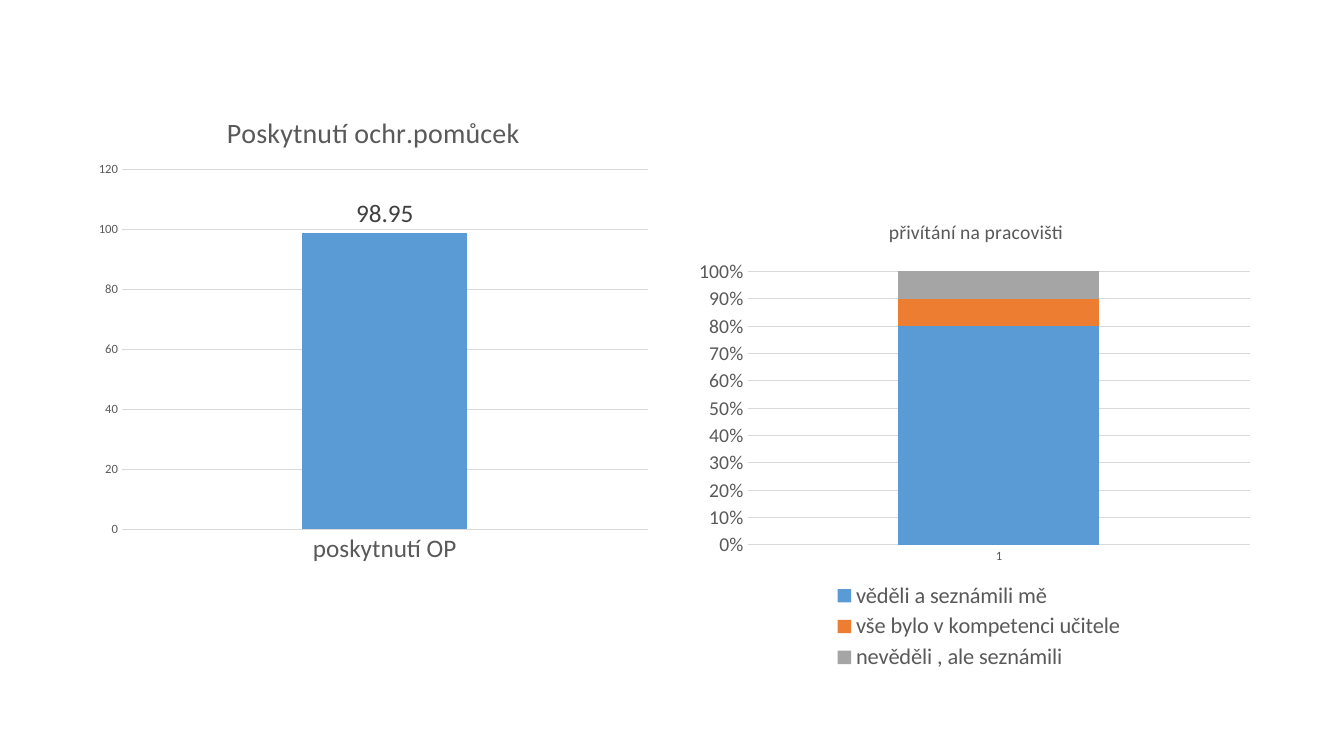
from lxml import etree
from pptx import Presentation
from pptx import util as u
from pptx.chart.data import CategoryChartData
from pptx.dml.color import RGBColor
from pptx.enum import chart as ch
from pptx.oxml.ns import qn

FONT = "Calibri"
GREY, DARK, PALE = "595959", "404040", "D9D9D9"
WIDTH, HEIGHT = 14.4, 12.09

CHARTS = [
    {
        "title": ("Poskytnutí ochr.pomůcek", 20),
        "kind": ch.XL_CHART_TYPE.COLUMN_CLUSTERED,
        "place": (2.21, 2.34),
        "category": ("poskytnutí OP", 18),
        "scale": (120, 20, "General", 9),
        "spacing": (219, -27),
        "series": [("Series 1", 98.95, "5B9BD5")],
        "labels": 18,
        "legend": None,
        "plot_area": (0.06, 0.16, 0.92, 0.75),
    },
    {
        "title": ("přivítání na pracovišti", 14),
        "kind": ch.XL_CHART_TYPE.COLUMN_STACKED_100,
        "place": (17.4, 5.03),
        "category": ("1", 9),
        "scale": (1, 0.1, "0%", 14),
        "spacing": (150, 100),
        "series": [
            ("věděli a seznámili mě", 80, "5B9BD5"),
            ("vše bylo v kompetenci učitele", 10, "ED7D31"),
            ("nevěděli , ale seznámili", 10, "A5A5A5"),
        ],
        "labels": None,
        "legend": (16, (0.24, 0.79, 0.53, 0.2)),
        "plot_area": (0.1, 0.15, 0.88, 0.57),
    },
]


def paint(color_format, color):
    color_format.rgb = RGBColor.from_string(color)


def style(font, size, color=GREY):
    font.name, font.size, font.bold = FONT, u.Pt(size), False
    paint(font.color, color)


def rule(line):
    line.width = u.Pt(0.75)
    paint(line.color, PALE)


def arrange(parent, box, inner=False):
    for old in parent.findall(qn("c:layout")):
        parent.remove(old)
    layout = etree.Element(qn("c:layout"))
    manual = etree.SubElement(layout, qn("c:manualLayout"))
    target = [("layoutTarget", "inner")] if inner else []
    modes = [("xMode", "edge"), ("yMode", "edge")]
    for tag, value in target + modes + list(zip("xywh", box)):
        etree.SubElement(manual, qn("c:" + tag)).set("val", str(value))
    parent.insert(0 if inner else 1, layout)


def add_column_chart(slide, content):
    category, category_size = content["category"]
    data = CategoryChartData()
    data.categories = [category]
    for name, value, _ in content["series"]:
        data.add_series(name, [value])
    left, top = content["place"]
    chart = slide.shapes.add_chart(
        content["kind"], u.Cm(left), u.Cm(top), u.Cm(WIDTH), u.Cm(HEIGHT), data
    ).chart
    style(chart.font, 10, "000000")

    title, title_size = content["title"]
    chart.has_title = True
    heading = chart.chart_title.text_frame.paragraphs[0].add_run()
    heading.text = title
    style(heading.font, title_size)
    chart.chart_title.include_in_layout = False

    columns = chart.plots[0]
    columns.vary_by_categories = False
    columns.gap_width, columns.overlap = content["spacing"]
    for series, (_, _, color) in zip(columns.series, content["series"]):
        series.format.fill.solid()
        paint(series.format.fill.fore_color, color)
        series.invert_if_negative = False

    maximum, step, number_format, scale_size = content["scale"]
    values, categories = chart.value_axis, chart.category_axis
    values.minimum_scale, values.maximum_scale, values.major_unit = 0, maximum, step
    values.tick_labels.number_format = number_format
    values.tick_labels.number_format_is_linked = False
    values.format.line.fill.background()
    values.has_major_gridlines = True
    rule(values.major_gridlines.format.line)
    rule(categories.format.line)
    for axis, size in ((values, scale_size), (categories, category_size)):
        axis.major_tick_mark = axis.minor_tick_mark = ch.XL_TICK_MARK.NONE
        style(axis.tick_labels.font, size)

    if content["labels"]:
        columns.has_data_labels = True
        labels = columns.data_labels
        labels.show_value = True
        labels.position = ch.XL_LABEL_POSITION.OUTSIDE_END
        style(labels.font, content["labels"], DARK)

    chart.has_legend = content["legend"] is not None
    if chart.has_legend:
        legend_size, legend_box = content["legend"]
        chart.legend.position = ch.XL_LEGEND_POSITION.BOTTOM
        chart.legend.include_in_layout = False
        style(chart.legend.font, legend_size)
        arrange(chart.element.find(".//" + qn("c:legend")), legend_box)
    arrange(chart.element.find(".//" + qn("c:plotArea")), content["plot_area"], True)


def main():
    deck = Presentation()
    deck.slide_width, deck.slide_height = u.Cm(33.87), u.Cm(19.05)
    slide = deck.slides.add_slide(deck.slide_layouts[6])
    for content in CHARTS:
        add_column_chart(slide, content)
    deck.save("out.pptx")


if __name__ == "__main__":
    main()
